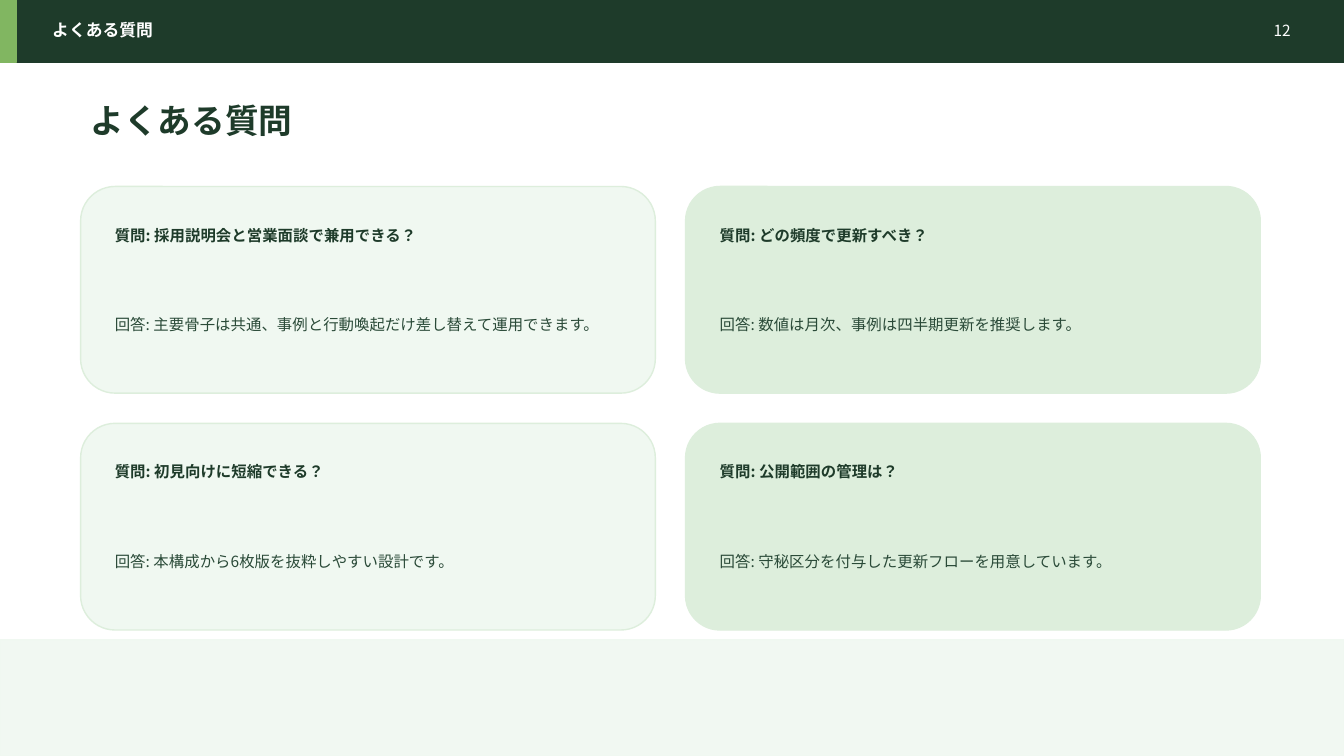
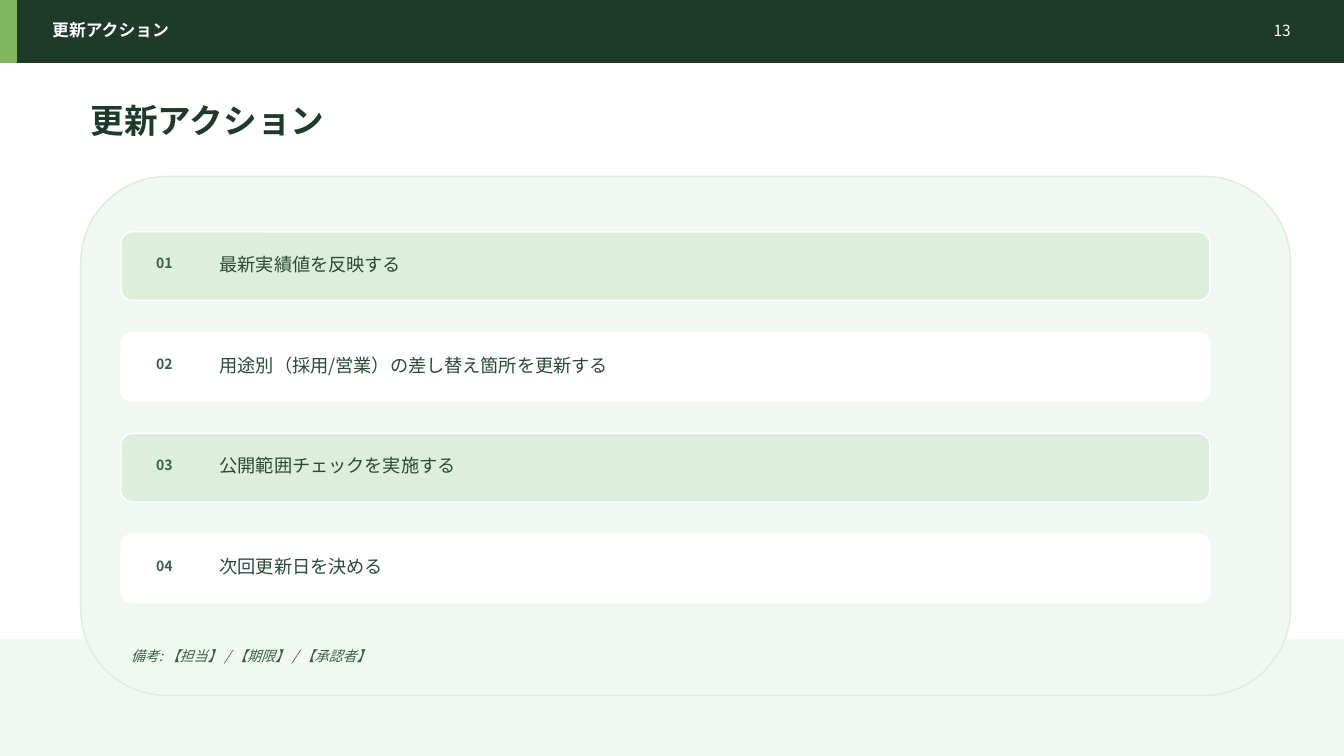
from dataclasses import dataclass

from lxml import etree
from pptx import Presentation
from pptx import util as u
from pptx.dml.color import RGBColor
from pptx.enum import lang, shapes, text
from pptx.oxml import ns

PX = 9144  # EMU per px, 100 px to the inch
WIDTH, HEIGHT = 1333, 750


@dataclass(frozen=True)
class Theme:
    # Colours
    dark: str = "1E3B2A"
    accent: str = "81B661"
    pale: str = "F0F8F1"
    soft: str = "DDEEDC"
    white: str = "FFFFFF"
    body: str = "2A4A38"
    muted: str = "366348"
    # Fonts
    title_font: str = "TeX Gyre Schola"
    font: str = "Noto Sans CJK JP"
    # Type sizes in points
    title_size: int = 24
    item_size: int = 13
    header_size: int = 12
    text_size: int = 11
    small_size: int = 10


T = Theme()
RECT = shapes.MSO_SHAPE.RECTANGLE
ROUNDED = shapes.MSO_SHAPE.ROUNDED_RECTANGLE

FAQS = [
    ("採用説明会と営業面談で兼用できる？",
     "主要骨子は共通、事例と行動喚起だけ差し替えて運用できます。"),
    ("どの頻度で更新すべき？", "数値は月次、事例は四半期更新を推奨します。"),
    ("初見向けに短縮できる？", "本構成から6枚版を抜粋しやすい設計です。"),
    ("公開範囲の管理は？", "守秘区分を付与した更新フローを用意しています。"),
]
ACTIONS = [
    "最新実績値を反映する",
    "用途別（採用/営業）の差し替え箇所を更新する",
    "公開範囲チェックを実施する",
    "次回更新日を決める",
]


# Basic elements
def emu(*lengths):
    return [u.Emu(n * PX) for n in lengths]


def add_box(s, kind, at, fill, line, opacity=100):
    sp = s.shapes.add_shape(kind, *emu(*at))
    sp.shadow.inherit = False
    sp.fill.solid()
    sp.fill.fore_color.rgb = RGBColor.from_string(fill)
    sp.line.color.rgb = RGBColor.from_string(line)
    sp.line.width = u.Pt(1)
    if opacity < 100:
        color = sp.fill._xPr.find(".//" + ns.qn("a:srgbClr"))
        etree.SubElement(color, ns.qn("a:alpha"), val=str(opacity * 1000))
    return sp


def write(sp, words, size, color, font=T.font, bold=False, italic=False,
          align=text.PP_ALIGN.LEFT):
    tf = sp.text_frame
    tf.word_wrap = True
    tf.auto_size = text.MSO_AUTO_SIZE.NONE
    tf.vertical_anchor = text.MSO_ANCHOR.MIDDLE
    p = tf.paragraphs[0]
    p.alignment = align
    r = p.add_run()
    r.text = words
    r.font.name = font
    r.font.size = u.Pt(size)
    r.font.bold = bold
    r.font.italic = italic
    r.font.color.rgb = RGBColor.from_string(color)
    r.font.language_id = lang.MSO_LANGUAGE_ID.JAPANESE
    # East Asian typeface follows the Latin one
    latin = r.font._element.find(ns.qn("a:latin"))
    latin.addnext(latin.makeelement(ns.qn("a:ea"), {"typeface": font}))


def add_text(s, at, words, size, color, **style):
    write(s.shapes.add_textbox(*emu(*at)), words, size, color, **style)


# Frame shared by the slides: footer band, header band and title
def add_slide(prs, title, number):
    s = prs.slides.add_slide(prs.slide_layouts[5])
    add_box(s, RECT, (0, 635, WIDTH, 115), T.pale, T.pale, opacity=90)
    add_box(s, RECT, (0, 0, WIDTH, 62), T.dark, T.dark)
    add_box(s, RECT, (0, 0, 16, 62), T.accent, T.accent)
    add_text(s, (42, 17, 880, 26), title, T.header_size, T.white, bold=True)
    add_text(s, (1215, 17, 75, 26), str(number), T.text_size, T.white,
             align=text.PP_ALIGN.RIGHT)
    sp = s.shapes.title
    sp.left, sp.top, sp.width, sp.height = emu(80, 95, 1140, 48)
    write(sp, title, T.title_size, T.dark, font=T.title_font, bold=True)
    return s


# Question and answer card
def add_faq_card(s, x, y, fill, question, answer):
    add_box(s, ROUNDED, (x, y, 570, 205), fill, T.soft)
    add_text(s, (x + 24, y + 24, 520, 48), f"質問: {question}",
             T.text_size, T.dark, bold=True)
    add_text(s, (x + 24, y + 82, 520, 110), f"回答: {answer}",
             T.text_size, T.body)


# Numbered action row
def add_action_row(s, y, fill, number, action):
    add_box(s, ROUNDED, (120, y, 1080, 68), fill, T.white)
    add_text(s, (145, y + 21, 44, 20), f"{number:02}",
             T.small_size, T.muted, bold=True)
    add_text(s, (208, y + 20, 960, 24), action, T.item_size, T.body)


def build_faq(prs):
    s = add_slide(prs, "よくある質問", 12)
    for i, (question, answer) in enumerate(FAQS):
        row, col = divmod(i, 2)
        add_faq_card(s, 80 + 600 * col, 185 + 235 * row,
                     (T.pale, T.soft)[col], question, answer)


def build_actions(prs):
    s = add_slide(prs, "更新アクション", 13)
    add_box(s, ROUNDED, (80, 175, 1200, 515), T.pale, T.soft)
    for i, action in enumerate(ACTIONS):
        add_action_row(s, 230 + 100 * i, (T.soft, T.white)[i % 2],
                       i + 1, action)
    add_text(s, (120, 640, 680, 22), "備考: 【担当】 / 【期限】 / 【承認者】",
             T.small_size, T.muted, italic=True)


def main():
    prs = Presentation()
    prs.slide_width, prs.slide_height = emu(WIDTH, HEIGHT)
    build_faq(prs)
    build_actions(prs)
    prs.save("out.pptx")


if __name__ == "__main__":
    main()
